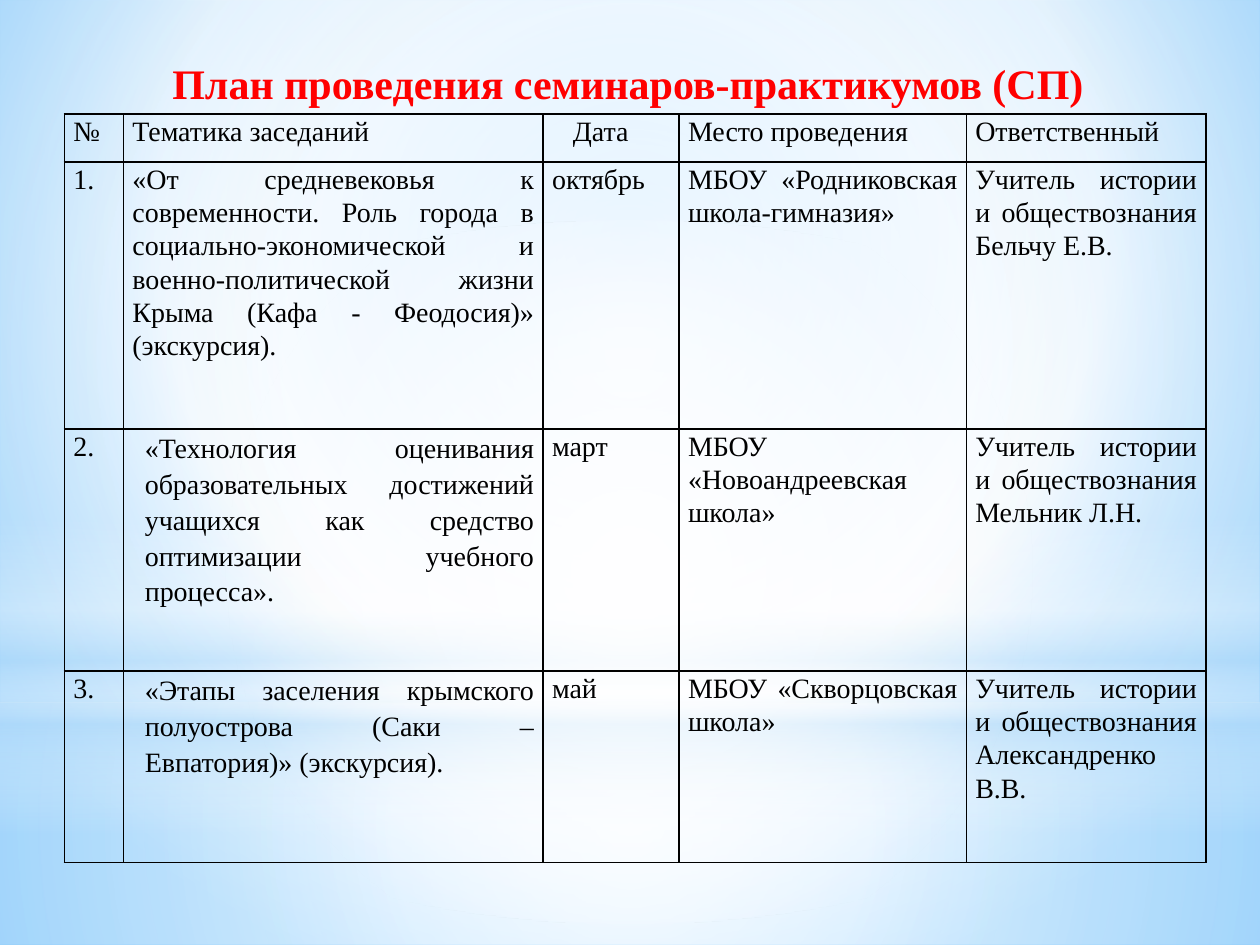
"""Slide with the seminar plan: a red title above a bordered table."""
from lxml import etree
from pptx import Presentation
from pptx import util as u
from pptx.dml.color import RGBColor
from pptx.enum import shapes, text
from pptx.oxml import parse_xml
from pptx.oxml.ns import nsdecls, qn

COLORS = {"title": "FF0000", "ink": "000000", "white": "FFFFFF", "mist": "B4DCFA",
          "sky": "9ED5FF", "deep": "5BB9FF"}
FONT = "Times New Roman"
TITLE = "План проведения семинаров-практикумов (СП)"
HEADERS = ["№", "Тематика заседаний", "Дата", "Место проведения", "Ответственный"]
TEACHER = "Учитель истории и обществознания "
MEETINGS = [
    ["1.", "«От средневековья к современности. Роль города в социально-экономической и "
     "военно-политической жизни Крыма (Кафа - Феодосия)» (экскурсия).",
     "октябрь", "МБОУ «Родниковская школа-гимназия»", TEACHER + "Бельчу Е.В."],
    ["2.", "«Технология оценивания образовательных достижений учащихся как средство "
     "оптимизации учебного процесса».",
     "март", "МБОУ «Новоандреевская школа»", TEACHER + "Мельник Л.Н."],
    ["3.", "«Этапы заселения крымского полуострова (Саки – Евпатория)» (экскурсия).",
     "май", "МБОУ «Скворцовская школа»", TEACHER + "Александренко В.В."],
]
COLUMN_WIDTHS = [1.19, 8.46, 2.74, 5.79, 4.83]
ROW_HEIGHTS = [0.97, 5.38, 4.88, 3.86]
DATE_INDENT, TOPIC_INDENT = 0.42, 0.25
SLIDE_WIDTH, SLIDE_HEIGHT = 25.4, 19.05

CENTER = (50, 50, 50, 50)
SKY_STOPS = [(0, "sky", 100), (60, "white", 100), (100, "deep", 100)]
RECTANGLE, OVAL = shapes.MSO_SHAPE.RECTANGLE, shapes.MSO_SHAPE.OVAL
LAYERS = [
    (RECTANGLE, 14.17, 4.88, CENTER,
     [(0, "white", 91), (37, "white", 76), (100, "mist", 79)]),
    (RECTANGLE, 0, 14.17, CENTER,
     [(0, "white", 89), (48, "white", 62), (100, "mist", 79)]),
    (RECTANGLE, 10.46, 6.35, None,
     [(0, "white", 0), (29, "white", 30), (45, "mist", 40),
      (55, "white", 26), (65, "mist", 60), (100, "white", 0)]),
    (OVAL, 4.45, 14.17, CENTER, [(0, "white", 100), (56, "white", 0)]),
]


def paint_gradient(fill, owner, stops, focus):
    """Fill with a circular gradient around focus, or a vertical one without it."""
    fill.gradient()
    gradient = owner.find(".//" + qn("a:gradFill"))
    for child in list(gradient):
        gradient.remove(child)
    stop_list = etree.SubElement(gradient, qn("a:gsLst"))
    for position, color, opacity in stops:
        stop = etree.SubElement(stop_list, qn("a:gs"), pos=str(position * 1000))
        tone = etree.SubElement(stop, qn("a:srgbClr"), val=COLORS[color])
        if opacity < 100:
            etree.SubElement(tone, qn("a:alpha"), val=str(opacity * 1000))
    if focus:
        circle = etree.SubElement(gradient, qn("a:path"), path="circle")
        sides = {side: str(share * 1000) for side, share in zip("ltrb", focus)}
        etree.SubElement(circle, qn("a:fillToRect"), sides)
    else:
        etree.SubElement(gradient, qn("a:lin"), ang="5400000", scaled="0")


def write(frame, content, size, color, alignment, bold=False):
    """Put one formatted paragraph into the frame and return it."""
    frame.word_wrap = True
    frame.text = content
    para = frame.paragraphs[0]
    para.alignment = alignment
    for span in para.runs:
        span.font.name, span.font.size, span.font.bold = FONT, u.Pt(size), bold
        span.font.color.rgb = RGBColor.from_string(COLORS[color])
    return para


def indent(para, distance):
    """Move the paragraph in from the left."""
    para._p.get_or_add_pPr().set("marL", str(u.Cm(distance)))


def draw_borders(cell):
    """Give the cell a thin black line on each side."""
    properties = cell._tc.get_or_add_tcPr()
    for place, side in enumerate("LRTB"):
        properties.insert(place, parse_xml(
            f'<a:ln{side} {nsdecls("a")} w="{u.Pt(1)}"><a:solidFill>'
            f'<a:srgbClr val="{COLORS["ink"]}"/></a:solidFill></a:ln{side}>'))


def add_backdrop(page):
    """Paint the background and the soft layers over it."""
    paint_gradient(page.background.fill, page._element, SKY_STOPS, (20, 10, 20, 60))
    for kind, top, height, focus, stops in LAYERS:
        layer = page.shapes.add_shape(kind, 0, u.Cm(top), u.Cm(SLIDE_WIDTH), u.Cm(height))
        layer.shadow.inherit = False
        layer.line.fill.background()
        paint_gradient(layer.fill, layer._element, stops, focus)


def add_plan(page):
    """Build the table of meetings."""
    rows = [HEADERS] + MEETINGS
    table = page.shapes.add_table(
        len(rows), len(HEADERS), u.Cm(1.3), u.Cm(2.3),
        u.Cm(sum(COLUMN_WIDTHS)), u.Cm(sum(ROW_HEIGHTS))).table
    table.first_row = table.horz_banding = False
    for column, width in zip(table.columns, COLUMN_WIDTHS):
        column.width = u.Cm(width)
    for row, height in zip(table.rows, ROW_HEIGHTS):
        row.height = u.Cm(height)
    for row_number, row in enumerate(rows):
        for column_number, content in enumerate(row):
            cell = table.cell(row_number, column_number)
            cell.margin_left = cell.margin_right = u.Cm(0.18)
            cell.margin_top = cell.margin_bottom = 0
            cell.fill.background()
            draw_borders(cell)
            para = write(cell.text_frame, content, 16, "ink", text.PP_ALIGN.JUSTIFY)
            para.line_spacing = 1.07
            if content == "Дата":
                indent(para, DATE_INDENT)
            elif column_number == 1 and row_number > 1:
                indent(para, TOPIC_INDENT)
                para.line_spacing = 1.15
                para.space_after = u.Pt(10)


def main():
    """Assemble and save the deck."""
    deck = Presentation()
    deck.slide_width, deck.slide_height = u.Cm(SLIDE_WIDTH), u.Cm(SLIDE_HEIGHT)
    page = deck.slides.add_slide(deck.slide_layouts[6])
    add_backdrop(page)
    box = page.shapes.add_textbox(u.Cm(1.09), u.Cm(1.04), u.Cm(23.01), u.Cm(10.65))
    title = write(box.text_frame, TITLE, 24, "title", text.PP_ALIGN.CENTER, bold=True)
    indent(title, 0.13)
    add_plan(page)
    deck.save("out.pptx")


if __name__ == "__main__":
    main()
